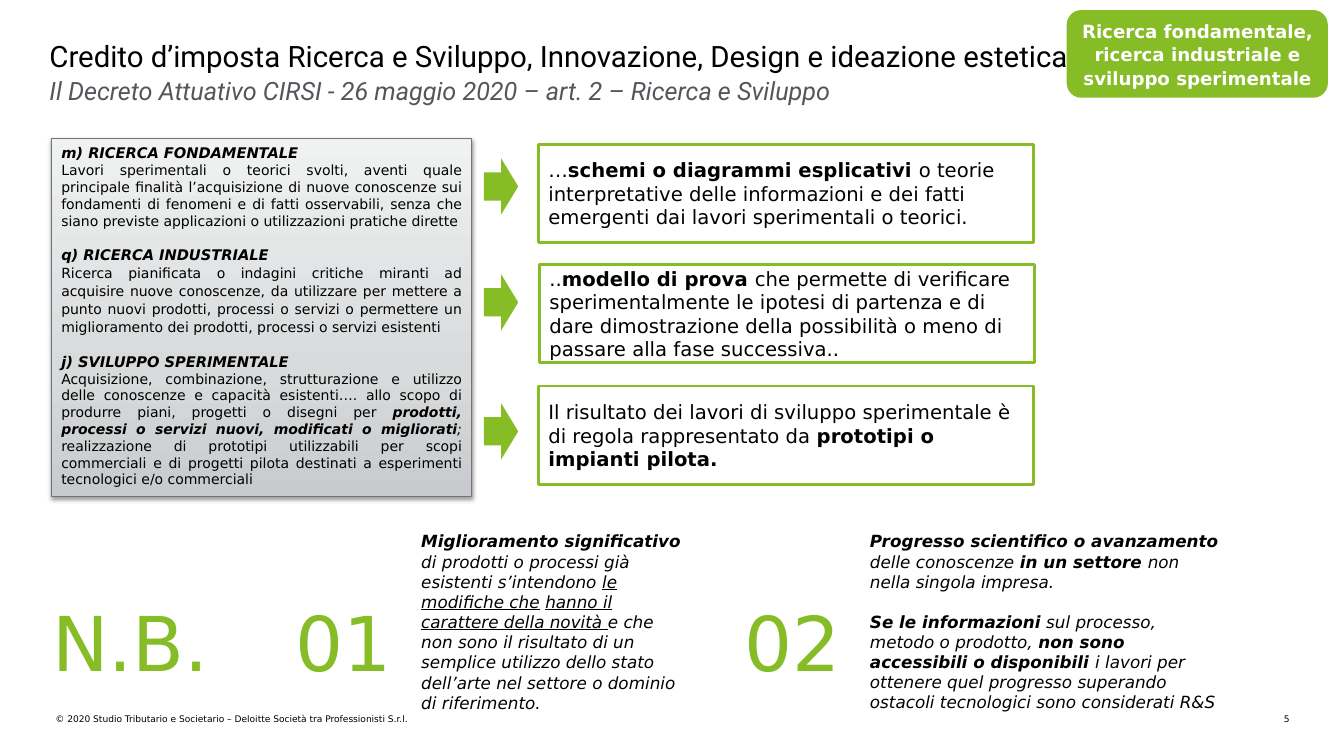
from pptx import Presentation, util as u
from pptx.dml.color import RGBColor
from pptx.enum import shapes, text
from pptx.oxml import parse_xml
from pptx.oxml.ns import nsdecls

GREEN, BLACK, WHITE = "86BC25", "000000", "FFFFFF"
SANS = "DejaVu Sans"
KIND, MID = shapes.MSO_SHAPE, text.MSO_ANCHOR.MIDDLE
LEFT, MIDDLE, RIGHT, JUST = (text.PP_ALIGN.LEFT, text.PP_ALIGN.CENTER,
                             text.PP_ALIGN.RIGHT, text.PP_ALIGN.JUSTIFY)
STYLES = {"b": "bold", "i": "italic", "u": "underline"}

# Each definition: heading, space before in points, body line spacing, body runs
TERMS = [
    ("m) RICERCA FONDAMENTALE", 0, 1, [
        ("Lavori sperimentali o teorici svolti, aventi quale principale finalità l’acquisizione di nuove "
         "conoscenze sui fondamenti di fenomeni e di fatti osservabili, senza che siano previste "
         "applicazioni o utilizzazioni pratiche dirette", "")]),
    ("q) RICERCA INDUSTRIALE", 11.6, 1.06, [
        ("Ricerca pianificata o indagini critiche miranti ad acquisire nuove conoscenze, da utilizzare "
         "per mettere a punto nuovi prodotti, processi o servizi o permettere un miglioramento dei "
         "prodotti, processi o servizi esistenti", "")]),
    ("j) SVILUPPO SPERIMENTALE", 11.6, 1, [
        ("Acquisizione, combinazione, strutturazione e utilizzo delle conoscenze e capacità esistenti…. "
         "allo scopo di produrre piani, progetti o disegni per ", ""),
        ("prodotti, processi o servizi nuovi, modificati o migliorati", "bi"),
        ("; ", "i"),
        ("realizzazione di prototipi utilizzabili per scopi commerciali e di progetti pilota destinati "
         "a esperimenti tecnologici e/o commerciali", "")]),
]

# Each result: arrow top, box left, box top, runs
RESULTS = [
    (1.57, 5.34, 1.43, [
        ("…", ""), ("schemi o diagrammi esplicativi ", "b"),
        ("o teorie interpretative delle informazioni e dei fatti emergenti dai lavori sperimentali o "
         "teorici.", "")]),
    (2.72, 5.35, 2.62, [
        ("..", ""), ("modello di prova ", "b"),
        ("che permette di verificare sperimentalmente le ipotesi di partenza e di dare dimostrazione "
         "della possibilità o meno di passare alla fase successiva..", "")]),
    (4, 5.34, 3.83, [
        ("Il risultato dei lavori di sviluppo sperimentale è di regola rappresentato da ", ""),
        ("prototipi o impianti pilota.", "b")]),
]

# Each note: number, left, text width, paragraphs
NOTES = [
    ("01", 2.74, 2.86, [[
        ("Miglioramento significativo ", "bi"),
        ("di prodotti o processi già esistenti s’intendono ", "i"),
        ("le modifiche che", "iu"), (" ", "i"), ("hanno il carattere della novità ", "iu"),
        ("e che non sono il risultato di un semplice utilizzo dello stato dell’arte nel settore o "
         "dominio di riferimento.", "i")]]),
    ("02", 7.19, 3.69, [
        [("Progresso scientifico o avanzamento ", "bi"), ("delle conoscenze ", "i"),
         ("in un settore ", "bi"), ("non nella singola impresa.", "i")],
        [("Se le informazioni", "bi"), (" sul processo, metodo o prodotto, ", "i"),
         ("non sono accessibili o disponibili ", "bi"),
         ("i lavori per ottenere quel progresso superando ostacoli tecnologici sono considerati R&S",
          "i")]]),
]


def rgb(code):
    return RGBColor.from_string(code)


def para(frame, runs, size, color=BLACK, font=SANS, first=True, **format):
    """Write runs of (words, style letters) as one paragraph."""
    line = frame.paragraphs[0] if first else frame.add_paragraph()
    for name, value in {"alignment": LEFT, **format}.items():
        setattr(line, name, value)
    for words, style in runs:
        run = line.add_run()
        run.text = words
        run.font.color.rgb = rgb(color)
        look = {"name": font, "size": u.Pt(size)}
        look.update({name: key in style for key, name in STYLES.items()})
        for name, value in look.items():
            setattr(run.font, name, value)


def setup(frame, side, top, anchor=text.MSO_ANCHOR.TOP):
    values = {"word_wrap": True, "vertical_anchor": anchor,
              "margin_left": u.Inches(side), "margin_right": u.Inches(side),
              "margin_top": u.Inches(top), "margin_bottom": u.Inches(top)}
    for name, value in values.items():
        setattr(frame, name, value)
    return frame


def label(slide, box, side=0, top=0):
    return setup(slide.shapes.add_textbox(*map(u.Inches, box)).text_frame, side, top)


def block(slide, kind, box, fill=None, line=None, width=2):
    shape = slide.shapes.add_shape(kind, *map(u.Inches, box))
    shape.shadow.inherit = False
    if fill:
        shape.fill.solid()
        shape.fill.fore_color.rgb = rgb(fill)
    if line:
        shape.line.color.rgb = rgb(line)
        shape.line.width = u.Pt(width)
    else:
        shape.line.fill.background()
    return shape


def shade(shape):
    """Give the panel its grey gradient and soft shadow."""
    props = shape._element.spPr
    stops = "".join(f'<a:gs pos="{at * 1000}"><a:srgbClr val="{code}"/></a:gs>'
                    for at, code in [(0, "C8CACD"), (35, "D8DADB"), (100, "F0F1F1")])
    props.insert(2, parse_xml(
        f'<a:gradFill {nsdecls("a")} rotWithShape="1"><a:gsLst>{stops}</a:gsLst>'
        '<a:lin ang="16200000" scaled="0"/></a:gradFill>'))
    props[-1].append(parse_xml(
        f'<a:outerShdw {nsdecls("a")} blurRad="{u.Pt(3.1)}" dist="{u.Pt(1.6)}" dir="5400000" '
        'rotWithShape="0"><a:srgbClr val="000000"><a:alpha val="38000"/></a:srgbClr></a:outerShdw>'))


def header(slide, left, top, width):
    para(label(slide, (left, top + 0.37, width, 0.83)),
         [("Il Decreto Attuativo CIRSI - 26 maggio 2020 – art. 2 – Ricerca e Sviluppo", "i")],
         18, "53565A", "Roboto")
    para(label(slide, (left, top, width, 0.37)),
         [("Credito d’imposta Ricerca e Sviluppo, Innovazione, Design e ideazione estetica", "")],
         21, font="Roboto")


def badge(slide, box):
    shape = block(slide, KIND.ROUNDED_RECTANGLE, box, GREEN)
    para(setup(shape.text_frame, 0.1, 0.1, MID),
         [("Ricerca fondamentale, ricerca industriale e sviluppo sperimentale", "b")],
         13, WHITE, alignment=MIDDLE, line_spacing=1.06)


def panel(slide, box):
    shape = block(slide, KIND.RECTANGLE, box, line="727578", width=0.75)
    shade(shape)
    frame = setup(shape.text_frame, 0.1, 0.05)
    for place, (head, gap, pitch, body) in enumerate(TERMS):
        para(frame, [(head, "bi")], 10.5, first=place == 0,
             line_spacing=1.06, space_before=u.Pt(gap))
        para(frame, body, 10, first=False, alignment=JUST, line_spacing=pitch)


def result(slide, arrow, left, top, runs):
    block(slide, KIND.RIGHT_ARROW, (4.8, arrow, 0.34, 0.56), GREEN)
    shape = block(slide, KIND.RECTANGLE, (left, top, 4.91, 0.98), WHITE, GREEN)
    para(setup(shape.text_frame, 0.1, 0.1, MID), runs, 14)


def big(slide, words, left, top, width):
    para(label(slide, (left, top, width, 0.91)), [(words, "")], 54, GREEN, alignment=MIDDLE)


def note(slide, number, left, top, width, paras):
    big(slide, number, left, top + 0.69, 1.34)
    frame = label(slide, (left + 1.34, top, width, 1.92), 0.1, 0.05)
    for place, runs in enumerate(paras):
        para(frame, runs, 12, first=place == 0, space_before=u.Pt(14 * place))


def footer(slide, top):
    para(label(slide, (0.55, top, 5.86, 0.11)),
         [("© 2020 Studio Tributario e Societario – Deloitte Società tra Professionisti S.r.l.", "")],
         6.5)
    para(label(slide, (12.45, top, 0.34, 0.11)), [("5", "")], 6.5, alignment=RIGHT)


def main():
    deck = Presentation()
    deck.slide_width, deck.slide_height = u.Inches(13.33), u.Inches(7.5)
    slide = deck.slides.add_slide(deck.slide_layouts[6])
    footer(slide, 7.08)
    panel(slide, (0.51, 1.37, 4.17, 3.56))
    badge(slide, (10.58, 0.1, 2.59, 0.87))
    for row in RESULTS:
        result(slide, *row)
    big(slide, "N.B.", 0.42, 5.91, 1.75)
    for number, left, width, paras in NOTES:
        note(slide, number, left, 5.22, width, paras)
    header(slide, 0.49, 0.38, 12.36)
    deck.save("out.pptx")


if __name__ == "__main__":
    main()
